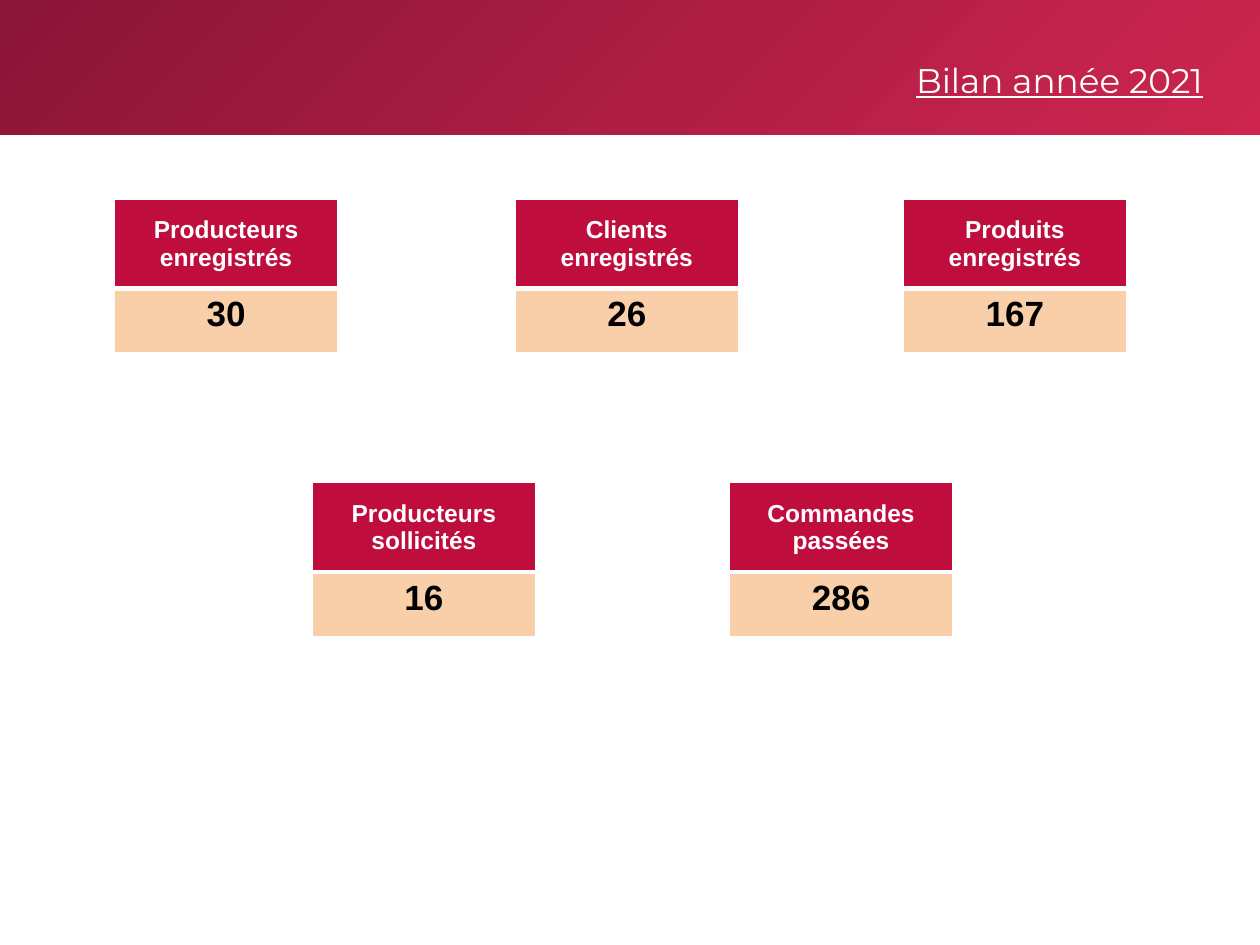
"""Builds the 2021 review slide with five key figures."""
import pptx
import pptx.dml.color
import pptx.enum.shapes
import pptx.enum.text
import pptx.oxml.ns
import pptx.util
from lxml import etree
from pptx.util import Inches

RGB = pptx.dml.color.RGBColor.from_string
ALIGN = pptx.enum.text.PP_ALIGN
ANCHOR = pptx.enum.text.MSO_ANCHOR
THEME = {
    "band": ("8A1538", "CD254F"),
    "white": "FFFFFF",
    "title": {"size": 19.5, "name": "Montserrat", "color": "FFFFFF", "bold": False, "underline": True},
    "rows": [
        {"height": 0.71, "fill": "BF0D3E", "anchor": ANCHOR.MIDDLE, "bottom": 3,
         "font": {"size": 14, "name": "Arial", "color": "FFFFFF", "bold": True}},
        {"height": 0.51, "fill": "F8CFA9", "anchor": ANCHOR.TOP, "bottom": 1,
         "font": {"size": 20, "name": "Arial", "color": "000000", "bold": True}},
    ],
}
CARD_W = 1.77
CARDS = [
    (0.91, 1.58, "Producteurs enregistrés", "30"),
    (4.09, 1.58, "Clients enregistrés", "26"),
    (7.17, 1.58, "Produits enregistrés", "167"),
    (5.79, 3.83, "Commandes passées", "286"),
    (2.48, 3.83, "Producteurs sollicités", "16"),
]


def write(tf, text, align, font):
    p = tf.paragraphs[0]
    p.alignment = align
    r = p.add_run()
    r.text = text
    for key, value in font.items():
        if key == "color":
            r.font.color.rgb = RGB(value)
        else:
            setattr(r.font, key, pptx.util.Pt(value) if key == "size" else value)


def add_borders(cell, bottom):
    tcPr = cell._tc.get_or_add_tcPr()
    qn = pptx.oxml.ns.qn
    for side, width in (("L", 1), ("R", 1), ("T", 1), ("B", bottom)):
        ln = etree.SubElement(tcPr, qn(f"a:ln{side}"), w=str(pptx.util.Pt(width)))
        fill = etree.SubElement(ln, qn("a:solidFill"))
        etree.SubElement(fill, qn("a:srgbClr"), val=THEME["white"])


prs = pptx.Presentation()
prs.slide_width, prs.slide_height = Inches(10), Inches(7.5)
s = prs.slides.add_slide(prs.slide_layouts[5])

band = s.shapes.add_shape(pptx.enum.shapes.MSO_SHAPE.RECTANGLE, 0, 0, Inches(10), Inches(1.07))
band.shadow.inherit = False
band.line.fill.background()
band.fill.gradient()
band.fill.gradient_angle = 315
for stop, color, position in zip(band.fill.gradient_stops, THEME["band"], (0, 1)):
    stop.color.rgb = RGB(color)
    stop.position = position

for left, top, label, figure in CARDS:
    height = sum(row["height"] for row in THEME["rows"])
    frame = s.shapes.add_table(2, 1, Inches(left), Inches(top), Inches(CARD_W), Inches(height))
    table = frame.table
    table.first_row = table.horz_banding = False
    for i, (text, row) in enumerate(zip((label, figure), THEME["rows"])):
        table.rows[i].height = Inches(row["height"])
        cell = table.cell(i, 0)
        add_borders(cell, THEME["rows"][0]["bottom"] if i == 0 else row["bottom"])
        if i:
            top_line = cell._tc.tcPr.find(pptx.oxml.ns.qn("a:lnT"))
            top_line.set("w", str(pptx.util.Pt(THEME["rows"][0]["bottom"])))
        cell.fill.solid()
        cell.fill.fore_color.rgb = RGB(row["fill"])
        cell.vertical_anchor = row["anchor"]
        write(cell.text_frame, text, ALIGN.CENTER, row["font"])

title = s.shapes.title
s.shapes._spTree.append(title._element)
title.left, title.top, title.width, title.height = map(Inches, (5, 0.42, 4.65, 0.65))
tf = title.text_frame
tf.word_wrap = True
tf.auto_size = pptx.enum.text.MSO_AUTO_SIZE.NONE
tf.vertical_anchor = ANCHOR.TOP
write(tf, "Bilan année 2021", ALIGN.RIGHT, THEME["title"])

prs.save("out.pptx")
